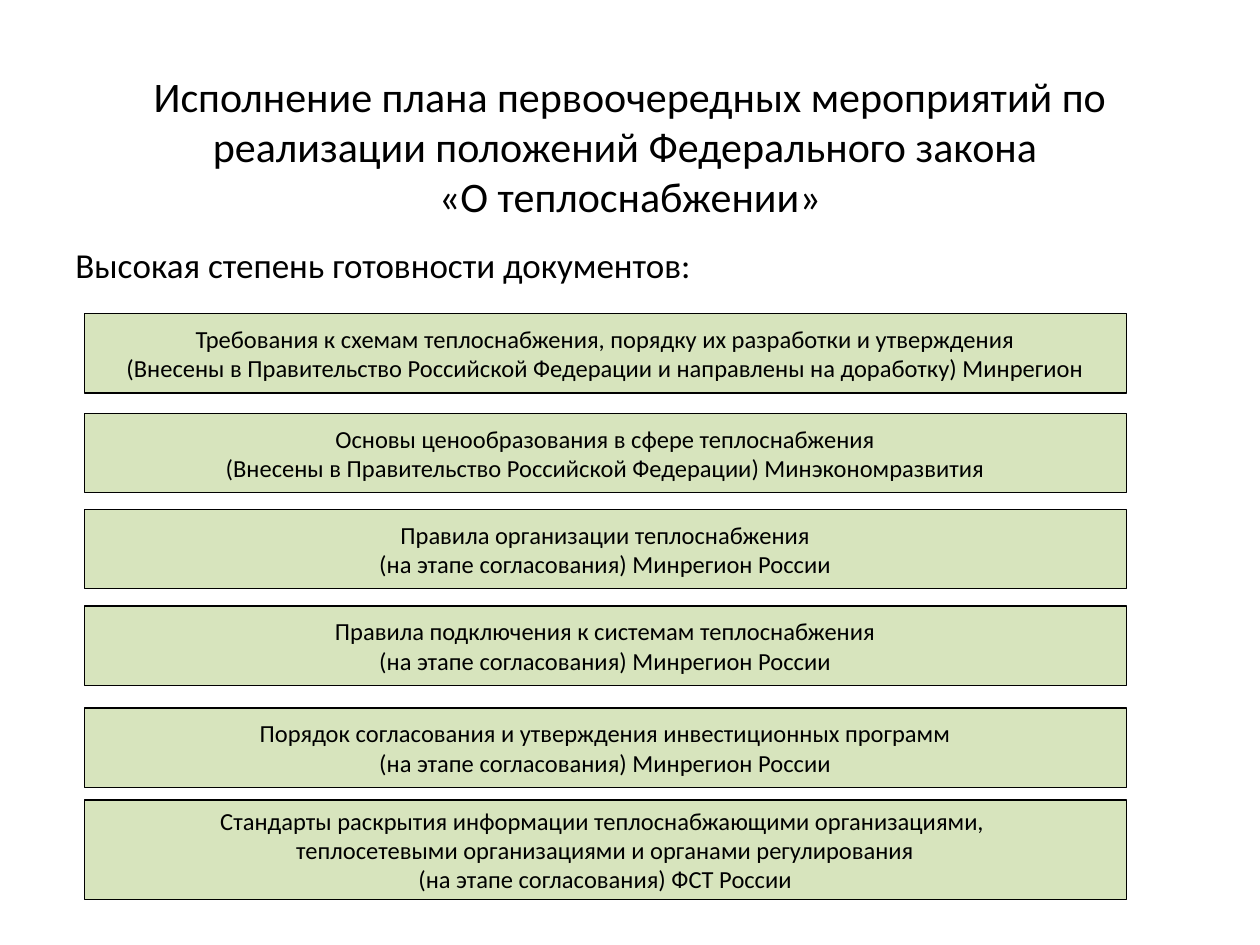
from pptx import Presentation
from pptx.dml.color import RGBColor
from pptx.enum.shapes import MSO_SHAPE
from pptx.enum.text import MSO_ANCHOR, PP_ALIGN
from pptx.util import Pt

# Content
TITLE = ["Исполнение плана первоочередных мероприятий по реализации положений "
         "Федерального закона \v«О теплоснабжении»"]
HEADING = ["Высокая степень готовности документов:"]
MINREGION_STAGE = "(на этапе согласования) Минрегион России"
# Each document: top of its box, lines of text
DOCUMENTS = [
    (179.3, ["Требования к схемам теплоснабжения, порядку их разработки и утверждения",
             "(Внесены в Правительство Российской Федерации и направлены на доработку) Минрегион"]),
    (236.2, ["Основы ценообразования в сфере теплоснабжения",
             "(Внесены в Правительство Российской Федерации) Минэкономразвития"]),
    (291.1, ["Правила организации теплоснабжения", MINREGION_STAGE]),
    (346.3, ["Правила подключения к системам теплоснабжения", MINREGION_STAGE]),
    (404.6, ["Порядок согласования и утверждения инвестиционных программ", MINREGION_STAGE]),
    (457.2, ["Стандарты раскрытия информации теплоснабжающими организациями, ",
             "теплосетевыми организациями и органами регулирования",
             "(на этапе согласования) ФСТ России"]),
]

THEME = {
    "font": "Calibri",
    "text": RGBColor(0x00, 0x00, 0x00),
    "line": RGBColor(0x00, 0x00, 0x00),
    "box": RGBColor(0xD7, 0xE4, 0xBD),
    "title_size": Pt(24),
    "heading_size": Pt(20),
    "box_size": Pt(14),
}

# Layout, in points
MARGIN, TEXT_WIDTH = 36, 648
BOX_LEFT, BOX_WIDTH = 48.2, 595.4
BOX_HEIGHTS = {2: 45.4, 3: 56.7}  # by number of lines


def write(shape, lines, size, align, anchor):
    frame = shape.text_frame
    frame.word_wrap = True
    frame.vertical_anchor = anchor
    frame.text = "\n".join(lines)
    for paragraph in frame.paragraphs:
        paragraph.alignment = align
        paragraph.font.name = THEME["font"]
        paragraph.font.size = size
        paragraph.font.color.rgb = THEME["text"]


def add_text(slide, top, height, lines, size, align, anchor):
    shape = slide.shapes.add_textbox(Pt(MARGIN), Pt(top), Pt(TEXT_WIDTH), Pt(height))
    write(shape, lines, size, align, anchor)


def add_document(slide, top, lines):
    shape = slide.shapes.add_shape(MSO_SHAPE.RECTANGLE, Pt(BOX_LEFT), Pt(top),
                                   Pt(BOX_WIDTH), Pt(BOX_HEIGHTS[len(lines)]))
    shape.shadow.inherit = False
    shape.fill.solid()
    shape.fill.fore_color.rgb = THEME["box"]
    shape.line.color.rgb = THEME["line"]
    shape.line.width = Pt(0.75)
    write(shape, lines, THEME["box_size"], PP_ALIGN.CENTER, MSO_ANCHOR.MIDDLE)


def main():
    presentation = Presentation()
    presentation.slide_width, presentation.slide_height = Pt(720), Pt(540)
    slide = presentation.slides.add_slide(presentation.slide_layouts[6])

    # Title and heading
    add_text(slide, 38.2, 90, TITLE, THEME["title_size"],
             PP_ALIGN.CENTER, MSO_ANCHOR.MIDDLE)
    add_text(slide, 135.4, 36, HEADING, THEME["heading_size"],
             PP_ALIGN.LEFT, MSO_ANCHOR.TOP)

    # Document boxes
    for top, lines in DOCUMENTS:
        add_document(slide, top, lines)

    presentation.save("out.pptx")


if __name__ == "__main__":
    main()
